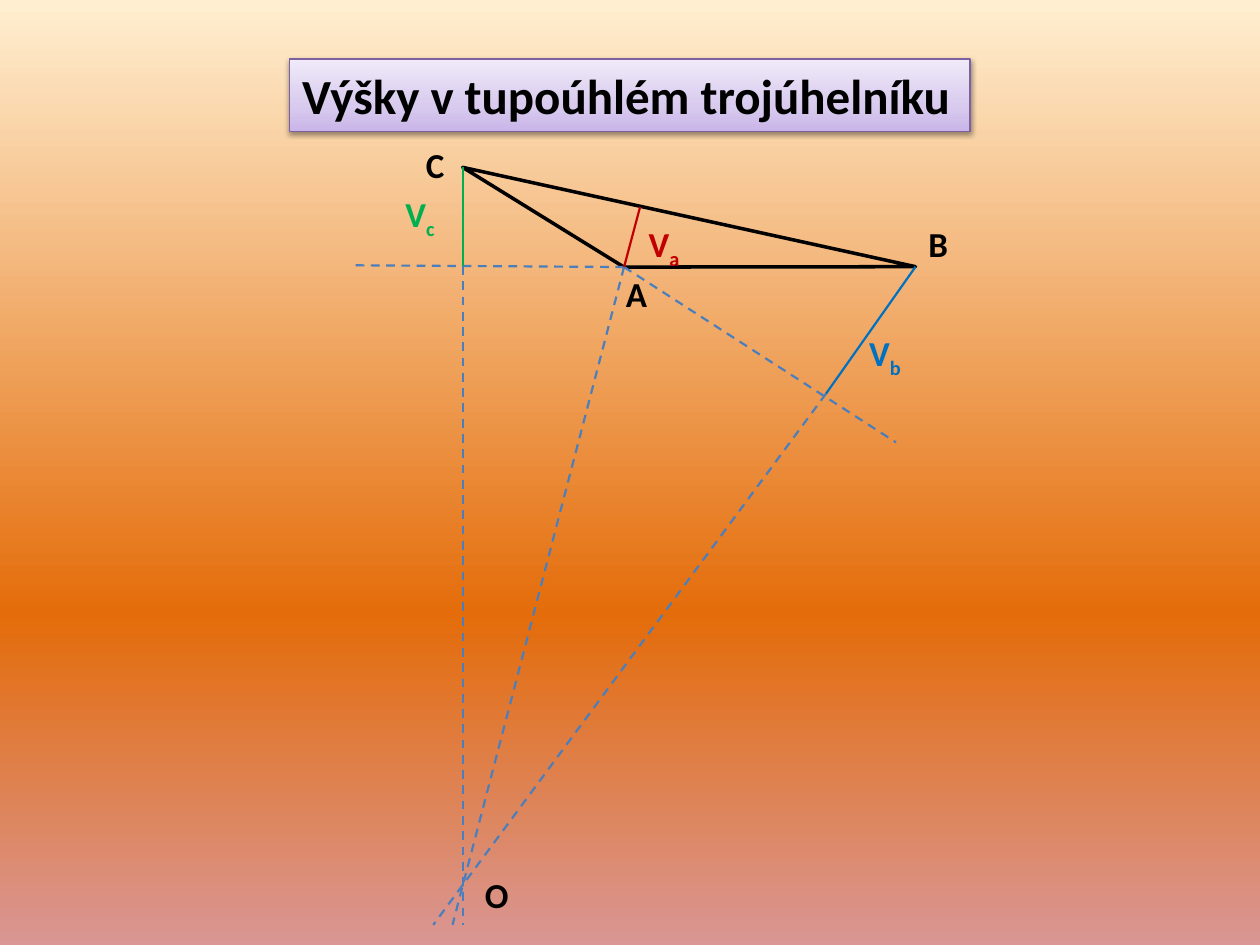
from dataclasses import dataclass

from lxml import etree
from pptx import Presentation
from pptx import util as u
from pptx.dml.color import RGBColor
from pptx.enum import dml, shapes, text
from pptx.oxml.ns import qn


@dataclass(frozen=True)
class Theme:
    font: str = "Calibri"
    title_size: float = 28
    label_size: float = 20
    ink: str = "000000"
    guide: str = "4B7EBC"
    altitude_a: str = "C00000"
    altitude_b: str = "0070C0"
    altitude_c: str = "00B050"
    title_line: str = "7D60A0"
    title_fill: tuple = ((0, "C9B5E8"), (35, "D8CBEE"), (100, "F0EAF9"))
    background: tuple = ((0, "FFEFD1"), (65, "E46C0A"), (100, "D99694"))


def add_element(parent, tag, **attributes):
    values = {name: str(value) for name, value in attributes.items()}
    return etree.SubElement(parent, qn(tag), values)


def set_gradient(fill, owner, stops, angle):
    """Give a fill any number of colour stops; the angle runs clockwise."""
    fill.gradient()
    gradient = owner.find(".//" + qn("a:gradFill"))
    for child in list(gradient):
        gradient.remove(child)
    stop_list = add_element(gradient, "a:gsLst")
    for position, color in stops:
        stop = add_element(stop_list, "a:gs", pos=position * 1000)
        add_element(stop, "a:srgbClr", val=color)
    add_element(gradient, "a:lin", ang=angle * 60000, scaled=0)


def write_text(paragraph, content, *, font, size, color, bold=True, baseline=0):
    run = paragraph.add_run()
    run.text = content
    run.font.name = font
    run.font.size = u.Pt(size)
    run.font.bold = bold
    run.font.color.rgb = RGBColor.from_string(color)
    if baseline:
        run.font._element.set("baseline", str(baseline * 1000))


class Drawing:
    def __init__(self, slide, theme):
        self.slide = slide
        self.theme = theme

    def background(self):
        set_gradient(self.slide.background.fill, self.slide._element,
                     self.theme.background, 90)

    def title(self, content, left, top, width, height):
        shape = self.slide.shapes.add_shape(
            shapes.MSO_SHAPE.RECTANGLE,
            u.Pt(left), u.Pt(top), u.Pt(width), u.Pt(height))
        properties = shape._element.spPr
        set_gradient(shape.fill, properties, self.theme.title_fill, 270)
        self.outline(shape.line, self.theme.title_line, 0.75)
        shape.shadow.inherit = False
        shadow = add_element(
            properties.find(qn("a:effectLst")), "a:outerShdw",
            blurRad=u.Pt(3.1), dist=u.Pt(1.6), dir=90 * 60000, rotWithShape=0)
        shadow_color = add_element(shadow, "a:srgbClr", val=self.theme.ink)
        add_element(shadow_color, "a:alpha", val=38000)
        frame = shape.text_frame
        frame.word_wrap = False
        frame.auto_size = text.MSO_AUTO_SIZE.SHAPE_TO_FIT_TEXT
        paragraph = frame.paragraphs[0]
        paragraph.alignment = text.PP_ALIGN.LEFT
        write_text(paragraph, content, font=self.theme.font,
                   size=self.theme.title_size, color=self.theme.ink)

    def label(self, content, left, top, width, color=None, subscript=""):
        shape = self.slide.shapes.add_textbox(
            u.Pt(left), u.Pt(top), u.Pt(width), u.Pt(31.5))
        frame = shape.text_frame
        frame.word_wrap = True
        frame.auto_size = text.MSO_AUTO_SIZE.SHAPE_TO_FIT_TEXT
        style = dict(font=self.theme.font, size=self.theme.label_size,
                     color=color or self.theme.ink)
        write_text(frame.paragraphs[0], content, **style)
        if subscript:
            write_text(frame.paragraphs[0], subscript, baseline=-25, **style)

    def polygon(self, first, *others):
        builder = self.slide.shapes.build_freeform(*map(u.Pt, first))
        builder.add_line_segments(
            [(u.Pt(x), u.Pt(y)) for x, y in others], close=True)
        shape = builder.convert_to_shape()
        shape.fill.background()
        shape.shadow.inherit = False
        self.outline(shape.line, self.theme.ink, 2)

    def line(self, start, end, color):
        connector = self.slide.shapes.add_connector(
            shapes.MSO_CONNECTOR.STRAIGHT, *map(u.Pt, (*start, *end)))
        self.outline(connector.line, color, 1.25)
        add_element(connector._element.spPr, "a:effectLst")
        return connector

    def guide(self, start, end):
        connector = self.line(start, end, self.theme.guide)
        connector.line.dash_style = dml.MSO_LINE.DASH

    def outline(self, line, color, width):
        line.color.rgb = RGBColor.from_string(color)
        line.width = u.Pt(width)


def main():
    presentation = Presentation()
    presentation.slide_width, presentation.slide_height = u.Pt(720), u.Pt(540)
    slide = presentation.slides.add_slide(presentation.slide_layouts[6])
    theme = Theme()
    drawing = Drawing(slide, theme)

    # Background and title
    drawing.background()
    drawing.title("Výšky v tupoúhlém trojúhelníku", 165.6, 33.8, 388.8, 41.2)

    # Triangle and the feet of its altitudes
    a, b, c = (356.6, 152.6), (523.2, 152.4), (264.4, 95.6)
    foot_a, foot_b, foot_c = (365.8, 118.2), (472, 225), (264.4, 152)
    drawing.polygon(c, a, b)

    # Extended sides and extended altitudes
    bottom = 528.5
    for start, end in (
        (a, (512, 252.8)),
        (a, (202.6, 151.6)),
        (a, (258.6, bottom)),
        (foot_b, (247.6, bottom)),
        (foot_c, (264.4, bottom)),
    ):
        drawing.guide(start, end)

    # Altitudes
    drawing.line(a, foot_a, theme.altitude_a)
    drawing.line(b, foot_b, theme.altitude_b)
    drawing.line(c, foot_c, theme.altitude_c)

    # Names of points and altitudes
    drawing.label("A", 350.6, 152, 18.7)
    drawing.label("B", 523.4, 123.8, 18)
    drawing.label("C", 236.2, 78.5, 20.9)
    drawing.label("O", 270, 495.4, 28)
    drawing.label("V", 363.6, 123.8, 37.4, theme.altitude_a, "a")
    drawing.label("V", 489.6, 185.8, 39.6, theme.altitude_b, "b")
    drawing.label("V", 224.6, 106.6, 36.7, theme.altitude_c, "c")

    presentation.save("out.pptx")


if __name__ == "__main__":
    main()
